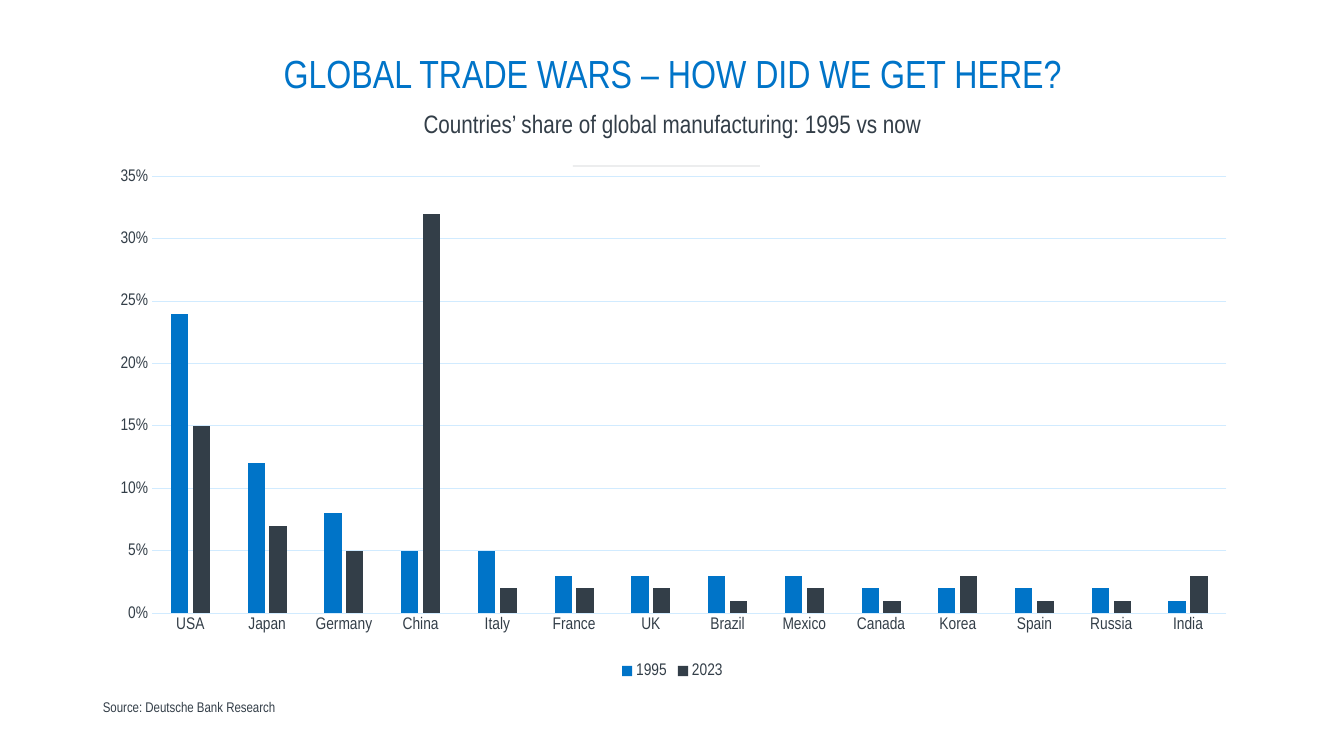
from lxml import etree
from pptx import Presentation
from pptx.chart.data import CategoryChartData
from pptx.dml.color import RGBColor
from pptx.enum.chart import XL_CHART_TYPE as ChartType, XL_LEGEND_POSITION as LegendPos
from pptx.enum.chart import XL_TICK_MARK as TickMark
from pptx.enum.shapes import MSO_CONNECTOR as Connector
from pptx.enum.text import MSO_ANCHOR as Anchor, PP_ALIGN as Align
from pptx.oxml import parse_xml
from pptx.oxml.ns import nsdecls, qn
from pptx.util import Pt

PX = 914400 / 100.8
FONT = "Arial Narrow"
BLUE, SLATE, PALE = "0074C8", "333E48", "D1EBFF"


def px(*lengths):
    return [round(length * PX) for length in lengths]


def write(shape, text, size, color=SLATE, align=Align.LEFT, anchor=Anchor.TOP, spacing=1.0):
    frame = shape.text_frame
    frame.word_wrap = True
    frame.vertical_anchor = anchor
    paragraph = frame.paragraphs[0]
    paragraph.text = text
    paragraph.alignment = align
    paragraph.line_spacing = spacing
    font = paragraph.runs[0].font
    font.name, font.size = FONT, Pt(size)
    font.color.rgb = RGBColor.from_string(color)


deck = Presentation()
deck.slide_width, deck.slide_height = px(1344, 756)
slide = deck.slides.add_slide(deck.slide_layouts[5])
shapes = slide.shapes

# Short divider under the headings
divider = shapes.add_connector(Connector.STRAIGHT, *px(760, 166, 573, 166))
divider.line.width = Pt(0.5)
divider.line.color.rgb = RGBColor.from_string(SLATE)
divider_color = divider.line._get_or_add_ln().find(".//" + qn("a:srgbClr"))
etree.SubElement(divider_color, qn("a:alpha"), val="26000")
etree.SubElement(divider.element.spPr, qn("a:effectLst"))

# Headings
headline = shapes.title
headline.left, headline.top, headline.width, headline.height = px(93, 49, 1159, 54)
heading = dict(align=Align.CENTER, anchor=Anchor.MIDDLE, spacing=0.9)
write(headline, "GLOBAL TRADE WARS – HOW DID WE GET HERE?", 28, color=BLUE, **heading)
subtitle = shapes.add_textbox(*px(93, 106, 1159, 38))
write(subtitle, "Countries’ share of global manufacturing: 1995 vs now", 18, **heading)

# Manufacturing shares by country: 1995, 2023
shares = {
    "USA": (0.24, 0.15), "Japan": (0.12, 0.07), "Germany": (0.08, 0.05),
    "China": (0.05, 0.32), "Italy": (0.05, 0.02), "France": (0.03, 0.02),
    "UK": (0.03, 0.02), "Brazil": (0.03, 0.01), "Mexico": (0.03, 0.02),
    "Canada": (0.02, 0.01), "Korea": (0.02, 0.03), "Spain": (0.02, 0.01),
    "Russia": (0.02, 0.01), "India": (0.01, 0.03),
}
share_data = CategoryChartData(number_format="0%")
share_data.categories = list(shares)
for year, values in zip(("1995", "2023"), zip(*shares.values())):
    share_data.add_series(year, values)
chart = shapes.add_chart(ChartType.COLUMN_CLUSTERED, *px(93, 167, 1159, 516), share_data).chart
chart.has_title = False
chart.font.name, chart.font.size = FONT, Pt(12)
chart.font.color.rgb = RGBColor.from_string(SLATE)

# Columns
columns = chart.plots[0]
columns.gap_width, columns.overlap = 219, -27
columns.vary_by_categories = False
for series, color in zip(columns.series, (BLUE, SLATE)):
    series.format.fill.solid()
    series.format.fill.fore_color.rgb = RGBColor.from_string(color)
    series.invert_if_negative = False

# Axes, gridlines and legend
countries, percent = chart.category_axis, chart.value_axis
for axis in (countries, percent):
    axis.major_tick_mark = axis.minor_tick_mark = TickMark.NONE
percent.minimum_scale, percent.maximum_scale, percent.major_unit = 0, 0.35, 0.05
percent.tick_labels.number_format = "0%"
percent.tick_labels.number_format_is_linked = False
percent.format.line.fill.background()
for rule in (countries.format.line, percent.major_gridlines.format.line):
    rule.width = Pt(0.75)
    rule.color.rgb = RGBColor.from_string(PALE)
chart.has_legend = True
chart.legend.position = LegendPos.BOTTOM
chart.legend.include_in_layout = False

# Fixed inner plot area
plot_area = chart._chartSpace.chart.plotArea
for old_layout in plot_area.findall(qn("c:layout")):
    plot_area.remove(old_layout)
settings = dict(layoutTarget="inner", xMode="edge", yMode="edge", x=0.051, y=0.018, w=0.927, h=0.847)
manual = "".join(f'<c:{key} val="{value}"/>' for key, value in settings.items())
plot_area.insert(0, parse_xml(
    f'<c:layout {nsdecls("c")}><c:manualLayout>{manual}</c:manualLayout></c:layout>'))

# Source line
source = shapes.add_textbox(*px(93, 694, 409, 27))
write(source, "Source: Deutsche Bank Research", 10)

deck.save("out.pptx")
